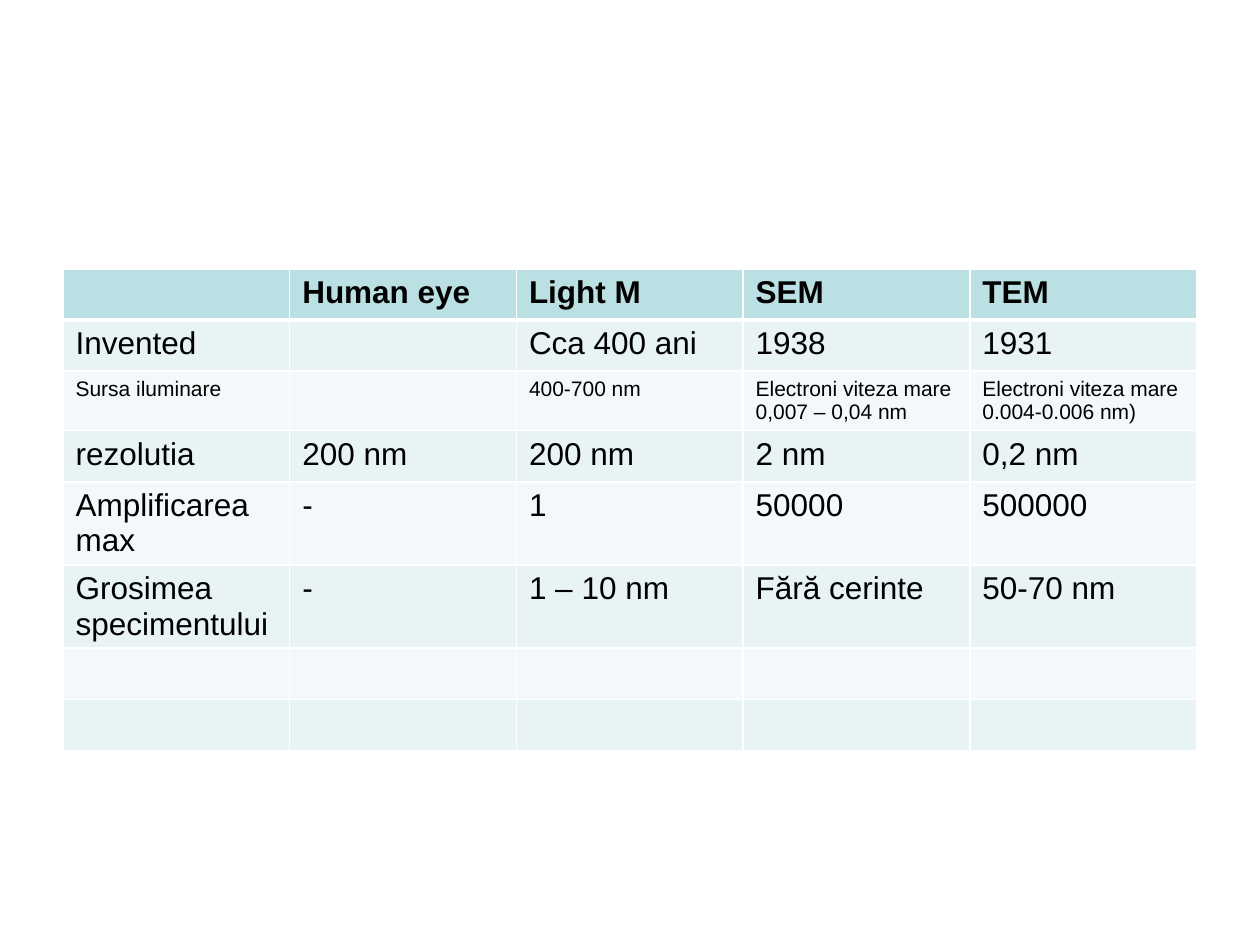
import pptx
import pptx.dml.color
import pptx.oxml
import pptx.oxml.ns
import pptx.util

Cm = pptx.util.Cm
Pt = pptx.util.Pt
RGB = pptx.dml.color.RGBColor

BLACK = RGB(0x00, 0x00, 0x00)
WHITE = RGB(0xFF, 0xFF, 0xFF)
HEAD = RGB(0xBB, 0xE0, 0xE3)
BANDS = (RGB(0xF3, 0xF9, 0xFA), RGB(0xE7, 0xF3, 0xF4))

ROWS = [
    ("", "Human eye", "Light M", "SEM", "TEM"),
    ("Invented", "", "Cca 400 ani", "1938", "1931"),
    ("Sursa iluminare", "", "400-700 nm",
     "Electroni viteza mare 0,007 – 0,04 nm",
     "Electroni viteza mare 0.004-0.006 nm)"),
    ("rezolutia", "200 nm", "200 nm", "2 nm", "0,2 nm"),
    ("Amplificarea max", "-", "1", "50000", "500000"),
    ("Grosimea specimentului", "-", "1 – 10 nm", "Fără cerinte", "50-70 nm"),
    ("",) * 5,
    ("",) * 5,
]
SMALL_ROW = 2


def add_edge(cell, side, width):
    """Draw one white border; side is L, R, T or B."""
    cell._tc.get_or_add_tcPr().append(pptx.oxml.parse_xml(
        f'<a:ln{side} {pptx.oxml.ns.nsdecls("a")} w="{Pt(width)}">'
        f'<a:solidFill><a:srgbClr val="{WHITE}"/></a:solidFill></a:ln{side}>'))


def style_cell(cell, row):
    # The rule under the header is shared by the first two rows.
    top = 3 if row == 1 else 1
    base = 3 if row == 0 else 1
    for side, width in (("L", 1), ("R", 1), ("T", top), ("B", base)):
        add_edge(cell, side, width)
    cell.fill.solid()
    cell.fill.fore_color.rgb = BANDS[row % 2] if row else HEAD


def write_cell(cell, text, row):
    if not text:
        return
    cell.text_frame.text = text
    font = cell.text_frame.paragraphs[0].runs[0].font
    font.name = "Arial"
    font.size = Pt(12 if row == SMALL_ROW else 18)
    font.bold = row == 0
    font.color.rgb = BLACK


def add_grid(slide):
    wide, high = Cm(4.57), Cm(1.03)
    cols = len(ROWS[0])
    grid = slide.shapes.add_table(
        len(ROWS), cols, Cm(1.27), Cm(5.42),
        wide * cols, high * len(ROWS)).table
    for col in grid.columns:
        col.width = wide
    for r, texts in enumerate(ROWS):
        grid.rows[r].height = high
        for c, text in enumerate(texts):
            cell = grid.cell(r, c)
            style_cell(cell, r)
            write_cell(cell, text, r)


def main():
    deck = pptx.Presentation()
    deck.slide_width, deck.slide_height = Cm(25.4), Cm(19.05)
    slide = deck.slides.add_slide(deck.slide_layouts[6])
    add_grid(slide)
    deck.save("out.pptx")


if __name__ == "__main__":
    main()
